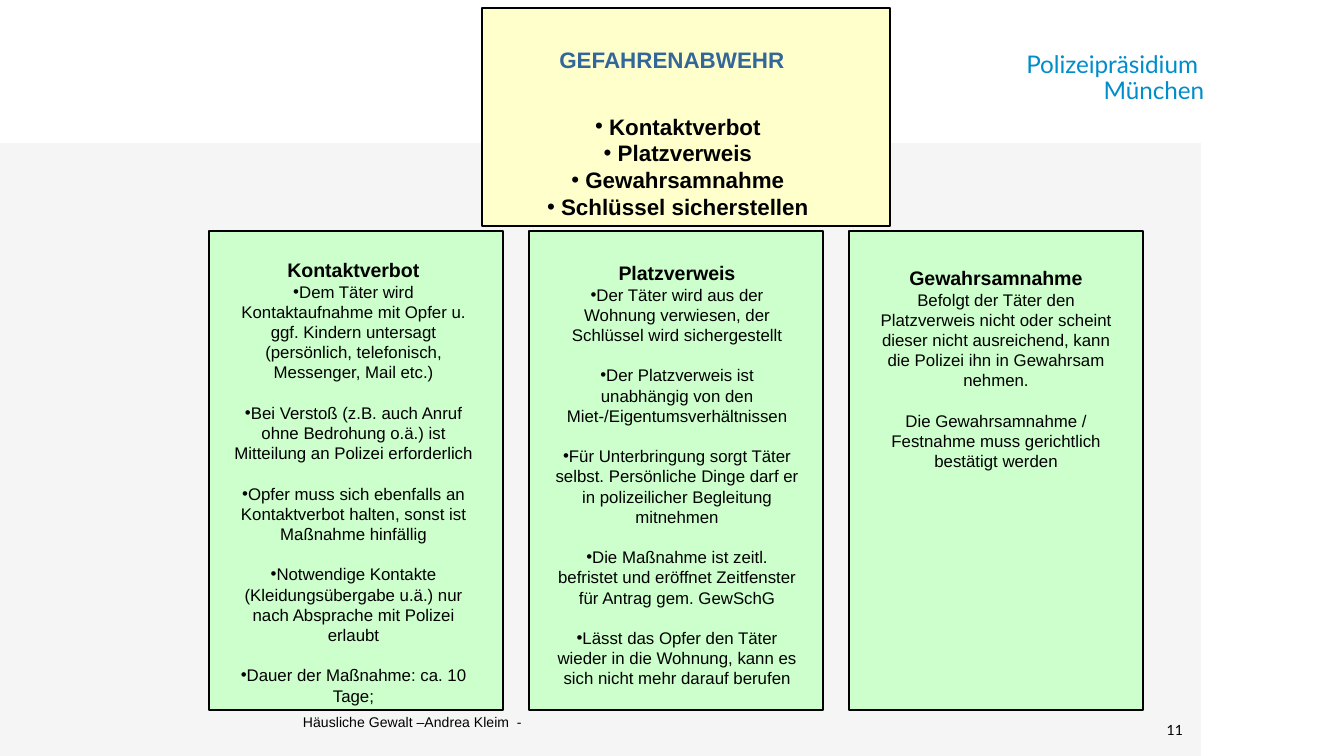
"""Build the slide on averting danger in cases of domestic violence."""
import pptx
import pptx.util
import pptx.dml.color
import pptx.enum.shapes
import pptx.enum.text
import pptx.oxml.ns
from lxml import etree

RGB = pptx.dml.color.RGBColor
ALIGN = pptx.enum.text.PP_ALIGN
ANCHOR = pptx.enum.text.MSO_ANCHOR

BLACK = RGB(0x00, 0x00, 0x00)
GREY = RGB(0xF5, 0xF5, 0xF5)
YELLOW = RGB(0xFF, 0xFF, 0xCC)
GREEN = RGB(0xCC, 0xFF, 0xCC)
TITLE_BLUE = RGB(0x33, 0x66, 0x99)
OFFICE_BLUE = RGB(0x00, 0x8D, 0xC9)

OFFICE = ["Polizeipräsidium ", "München"]
FOOTER = "Häusliche Gewalt –Andrea Kleim  -"
PAGE = "11"
TITLE = "GEFAHRENABWEHR"
MEASURES = [" Kontaktverbot", " Platzverweis", " Gewahrsamnahme", " Schlüssel sicherstellen"]
COLUMNS = [
    {"heading": "Kontaktverbot", "bullet": True, "inset": 7, "area": (251, 275, 465), "points": [
        "Dem Täter wird Kontaktaufnahme mit Opfer u. ggf. Kindern untersagt "
        "(persönlich, telefonisch, Messenger, Mail etc.)",
        "Bei Verstoß (z.B. auch Anruf ohne Bedrohung o.ä.) ist Mitteilung an Polizei erforderlich",
        "Opfer muss sich ebenfalls an Kontaktverbot halten, sonst ist Maßnahme hinfällig",
        "Notwendige Kontakte (Kleidungsübergabe u.ä.) nur nach Absprache mit Polizei erlaubt",
        "Dauer der Maßnahme: ca. 10 Tage;",
    ]},
    {"heading": "Platzverweis", "bullet": True, "inset": 13, "area": (254, 270, 445), "points": [
        "Der Täter wird aus der Wohnung verwiesen, der Schlüssel wird sichergestellt",
        "Der Platzverweis ist unabhängig von den Miet-/Eigentumsverhältnissen",
        "Für Unterbringung sorgt Täter selbst. Persönliche Dinge darf er "
        "in polizeilicher Begleitung mitnehmen",
        "Die Maßnahme ist zeitl. befristet und eröffnet Zeitfenster für Antrag gem. GewSchG",
        "Lässt das Opfer den Täter wieder in die Wohnung, kann es sich nicht mehr darauf berufen",
    ]},
    {"heading": "Gewahrsamnahme", "bullet": False, "inset": 12, "area": (259, 270, 220), "points": [
        "Befolgt der Täter den Platzverweis nicht oder scheint dieser nicht ausreichend, "
        "kann die Polizei ihn in Gewahrsam nehmen.",
        "Die Gewahrsamnahme / Festnahme muss gerichtlich bestätigt werden",
    ]},
]

COLUMN_LEFT, COLUMN_TOP, COLUMN_STEP = 209, 231, 320
COLUMN_WIDTH, COLUMN_HEIGHT = 294, 479
POINT_GAP = 10.8


def px(length):
    return pptx.util.Emu(round(length * 914400 / 134.4))


def write(frame, text, *, size, font="Arial", color=BLACK, bold=False,
          align=ALIGN.CENTER, bullet=False, before=0, spacing=1.0):
    paragraph = frame.paragraphs[0] if not frame.text else frame.add_paragraph()
    properties = paragraph._p.get_or_add_pPr()
    properties.set("marL", "0")
    properties.set("indent", "0")
    if bullet:
        etree.SubElement(properties, pptx.oxml.ns.qn("a:buFont"), typeface="Arial")
        etree.SubElement(properties, pptx.oxml.ns.qn("a:buChar"), char="•")
    else:
        etree.SubElement(properties, pptx.oxml.ns.qn("a:buNone"))
    paragraph.alignment = align
    paragraph.line_spacing = spacing
    paragraph.space_before = pptx.util.Pt(before)
    run = paragraph.add_run()
    run.text = text
    run.font.size = pptx.util.Pt(size)
    run.font.name = font
    run.font.bold = bold
    run.font.color.rgb = color


def add_panel(slide, left, top, width, height, fill, outlined=True):
    panel = slide.shapes.add_shape(pptx.enum.shapes.MSO_SHAPE.RECTANGLE,
                                   px(left), px(top), px(width), px(height))
    panel.shadow.inherit = False
    panel.fill.solid()
    panel.fill.fore_color.rgb = fill
    if outlined:
        panel.line.color.rgb = BLACK
        panel.line.width = pptx.util.Pt(0.75)
    else:
        panel.line.fill.background()


def place(slide, holder, left, top, width, height, wrap=True):
    slide.shapes._spTree.append(holder.element)
    holder.left, holder.top = px(left), px(top)
    holder.width, holder.height = px(width), px(height)
    frame = holder.text_frame
    frame.word_wrap = wrap
    frame.auto_size = pptx.enum.text.MSO_AUTO_SIZE.NONE
    frame.vertical_anchor = ANCHOR.TOP
    return frame


def add_label(slide, left, top, width, height, anchor=ANCHOR.MIDDLE):
    frame = slide.shapes.add_textbox(px(left), px(top), px(width), px(height)).text_frame
    frame.word_wrap = True
    frame.vertical_anchor = anchor
    frame.margin_left = frame.margin_right = frame.margin_top = frame.margin_bottom = 0
    return frame


def main():
    deck = pptx.Presentation()
    deck.slide_width, deck.slide_height = px(1344), px(756)
    slide = deck.slides.add_slide(deck.slide_layouts.get_by_name("Comparison"))
    title, measures, *bodies = list(slide.placeholders)

    add_panel(slide, 0, 143, 1201, 613, GREY, outlined=False)
    office = add_label(slide, 973, 52, 231, 52, ANCHOR.TOP)
    for line in OFFICE:
        write(office, line, size=13, font="Lato", color=OFFICE_BLUE,
              align=ALIGN.RIGHT, spacing=pptx.util.Pt(14))
    write(add_label(slide, 303, 713, 1000, 18), FOOTER, size=7.5, align=ALIGN.LEFT)
    write(add_label(slide, 1124, 709, 59, 42), PAGE, size=7.5, font="Lato",
          align=ALIGN.RIGHT)

    add_panel(slide, 482, 8, 408, 218, YELLOW)
    write(place(slide, title, 524, 39, 296, 32, wrap=False), TITLE,
          size=12, color=TITLE_BLUE, bold=True)
    measure_frame = place(slide, measures, 532, 106, 292, 122, wrap=False)
    for measure in MEASURES:
        write(measure_frame, measure, size=12, bold=True, bullet=True)

    for index, (column, body) in enumerate(zip(COLUMNS, bodies)):
        left = COLUMN_LEFT + index * COLUMN_STEP
        add_panel(slide, left, COLUMN_TOP, COLUMN_WIDTH, COLUMN_HEIGHT, GREEN)
        frame = place(slide, body, left + column["inset"], *column["area"])
        write(frame, column["heading"], size=10.5, bold=True)
        for number, point in enumerate(column["points"]):
            write(frame, point, size=9, bullet=column["bullet"],
                  before=POINT_GAP if number else 0)

    deck.save("out.pptx")


if __name__ == "__main__":
    main()
